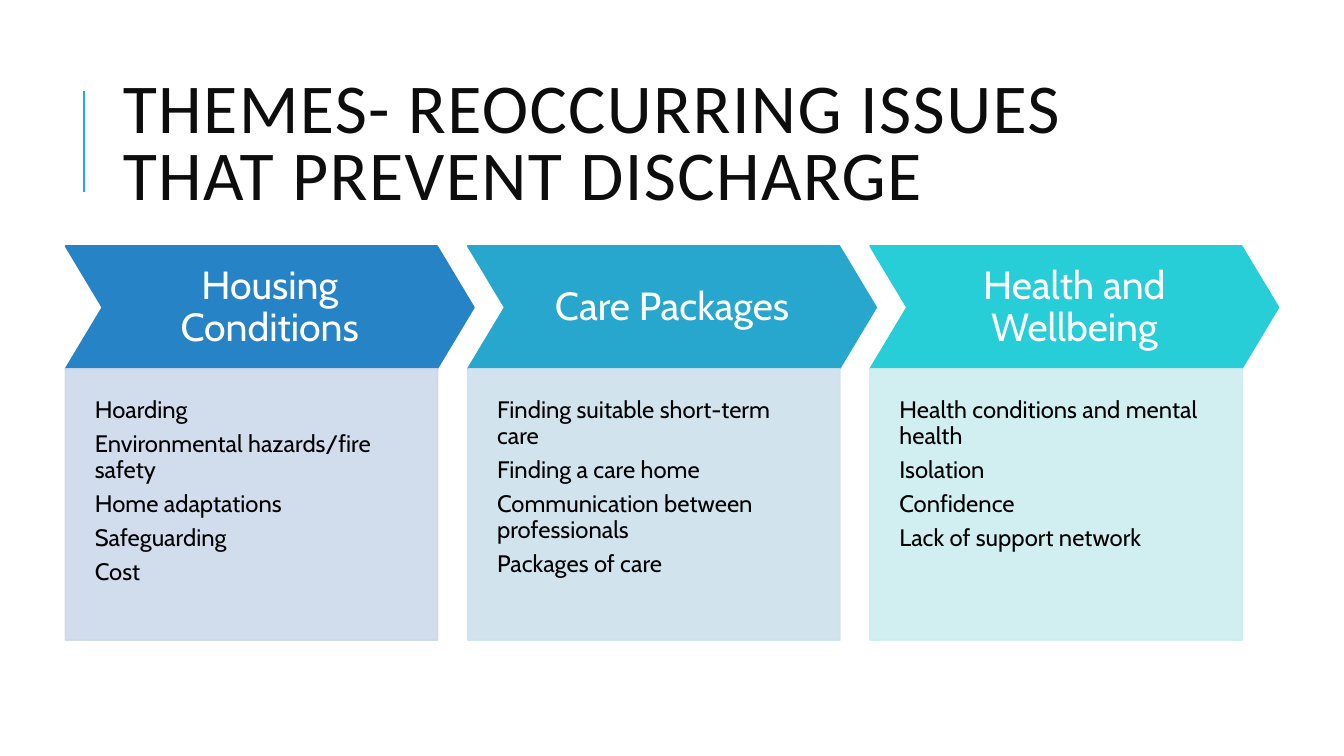
from pptx import Presentation
from pptx.dml.color import RGBColor
from pptx.enum.shapes import MSO_CONNECTOR, MSO_SHAPE
from pptx.enum.text import MSO_ANCHOR, PP_ALIGN
from pptx.oxml.ns import qn
from pptx.util import Inches, Pt
from lxml import etree

TITLE = "THEMES- REOCCURRING ISSUES THAT PREVENT DISCHARGE"
# heading, chevron colour, panel colour, issues
THEMES = [
    ("Housing Conditions", "2683C6", "CDD9EA",
     ["Hoarding", "Environmental hazards/fire safety", "Home adaptations",
      "Safeguarding", "Cost"]),
    ("Care Packages", "27A7CE", "CDE2ED",
     ["Finding suitable short-term care", "Finding a care home",
      "Communication between professionals", "Packages of care"]),
    ("Health and Wellbeing", "27CED7", "CDEDF0",
     ["Health conditions and mental health", "Isolation", "Confidence",
      "Lack of support network"]),
]
LEFT, TOP, STEP = 0.65, 2.44, 3.99
CHEVRON_W, CHEVRON_H = 4.05, 1.22
PANEL_W, PANEL_H = 3.69, 2.69


def rgb(code):
    return RGBColor.from_string(code)


def set_opacity(sp, percent):
    """Make the fill and line of a shape partly transparent."""
    for color in sp._element.spPr.iter(qn("a:srgbClr")):
        etree.SubElement(color, qn("a:alpha"), val=str(percent * 1000))


def add_block(shapes, kind, x, y, w, h, color):
    sp = shapes.add_shape(kind, Inches(x), Inches(y), Inches(w), Inches(h))
    sp.shadow.inherit = False
    sp.line.width = Pt(1.25)
    for fill in (sp.fill, sp.line.fill):
        fill.solid()
        fill.fore_color.rgb = rgb(color)
    return sp


def write(sp, lines, size, font, color, spacing, anchor, align=PP_ALIGN.LEFT,
          after=0, inset=(0.1, 0.05, 0.1, 0.05)):
    """Fill a shape with one paragraph per line; inset is left, top, right, bottom."""
    tf = sp.text_frame
    tf.word_wrap = True
    tf.vertical_anchor = anchor
    tf.margin_left, tf.margin_top, tf.margin_right, tf.margin_bottom = map(Inches, inset)
    for i, line in enumerate(lines):
        p = tf.add_paragraph() if i else tf.paragraphs[0]
        p.alignment = align
        p.line_spacing = spacing
        p.space_after = Pt(after)
        r = p.add_run()
        r.text = line
        r.font.size = Pt(size)
        r.font.name = font
        r.font.color.rgb = rgb(color)
    return tf


prs = Presentation()
prs.slide_width, prs.slide_height = Inches(13.33), Inches(7.5)
s = prs.slides.add_slide(prs.slide_layouts[6])

rule = s.shapes.add_connector(MSO_CONNECTOR.STRAIGHT, Inches(0.83), Inches(1.9),
                              Inches(0.83), Inches(0.9))
rule.line.color.rgb = rgb("1CADE4")
rule.line.width = Pt(1.5)
etree.SubElement(rule._element.spPr, qn("a:effectLst"))

title = s.shapes.add_textbox(Inches(1.12), Inches(0.64), Inches(10.63), Inches(1.64))
tf = write(title, [TITLE], 50, "Calibri", "0D0D0D", 0.8, MSO_ANCHOR.MIDDLE)
tf.paragraphs[0].runs[0]._r.get_or_add_rPr().set("spc", "100")

for i, (heading, strong, pale, issues) in enumerate(THEMES):
    x = LEFT + i * STEP
    chevron = add_block(s.shapes, MSO_SHAPE.CHEVRON, x, TOP, CHEVRON_W, CHEVRON_H, strong)
    chevron.adjustments[0] = 0.3
    write(chevron, [heading], 28, "Cabin", "FFFFFF", 0.9, MSO_ANCHOR.MIDDLE,
          PP_ALIGN.CENTER, inset=(0.15,) * 4)
    panel = add_block(s.shapes, MSO_SHAPE.RECTANGLE, x, TOP + CHEVRON_H,
                      PANEL_W, PANEL_H, pale)
    set_opacity(panel, 90)
    write(panel, issues, 17, "Cabin", "000000", 0.9, MSO_ANCHOR.TOP, after=6,
          inset=(0.29, 0.29, 0.29, 0.58))

prs.save("out.pptx")
